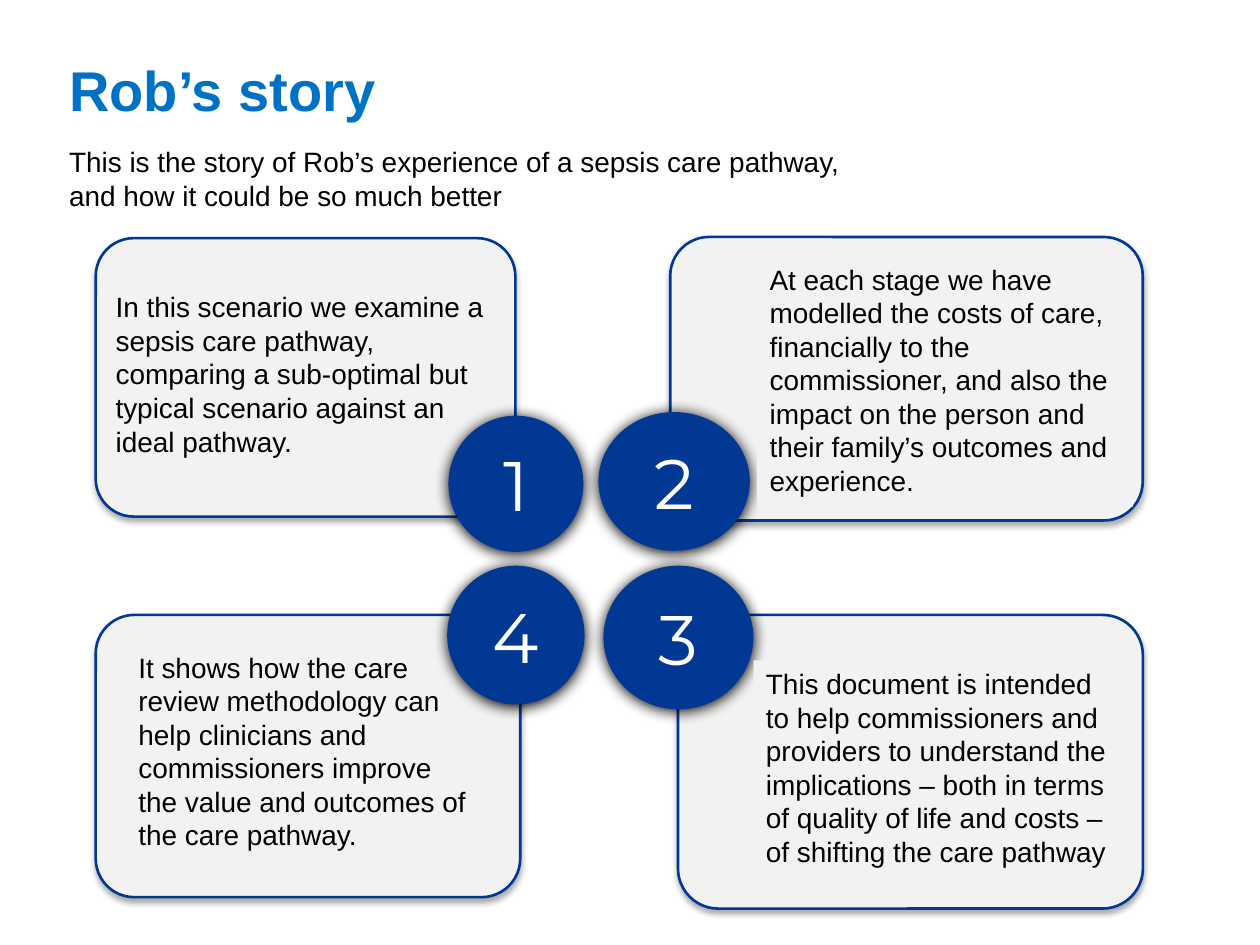
"""Build the slide that introduces Rob's story in four numbered cards."""
from typing import NamedTuple

from lxml.etree import SubElement as Sub
from pptx import Presentation as Deck
from pptx.dml.color import RGBColor as Rgb
from pptx.enum.shapes import MSO_SHAPE as Kind
from pptx.enum.text import MSO_ANCHOR as Anchor, PP_ALIGN as Align
from pptx.oxml.ns import qn
from pptx.util import Pt

NAVY, GREY, BLACK, WHITE, BLUE = "003893", "F2F2F2", "000000", "FFFFFF", "0072C6"


class Area(NamedTuple):
    left: float
    top: float
    width: float
    height: float


class Shade(NamedTuple):
    alpha: int
    blur: float
    dist: float


class Card(NamedTuple):
    num: str
    text: str
    box: Area
    disc: Area
    note: Area
    over: bool = True


SOFT, DEEP = Shade(32, 3.5, 2.2), Shade(100, 8.5, 1)

CARDS = [
    Card("1", "In this scenario we examine a sepsis care pathway, comparing a "
         "sub-optimal but typical scenario against an ideal pathway.",
         Area(54.7, 136.1, 239.8, 159.1), Area(257, 238.3, 75.6, 76.3),
         Area(59, 162, 227.5, 104.4), False),
    Card("4", "It shows how the care review methodology can help clinicians and "
         "commissioners improve the value and outcomes of the care pathway.",
         Area(54.7, 351.4, 242.6, 161.3), Area(256.3, 324, 77, 77.8),
         Area(72, 367.9, 203.8, 123.8)),
    Card("2", "At each stage we have modelled the costs of care, financially to the "
         "commissioner, and also the impact on the person and their family’s "
         "outcomes and experience.",
         Area(383, 135.4, 270, 162), Area(342.7, 236.2, 85, 77.8),
         Area(432.7, 146.2, 214.6, 143.3)),
    Card("3", "This document is intended to help commissioners and providers to "
         "understand the implications – both in terms of quality of life and "
         "costs – of shifting the care pathway",
         Area(387.4, 351.4, 265.7, 167.8), Area(345.6, 324, 84.2, 80.6),
         Area(430.6, 377.3, 216.7, 123.8)),
]


def tint(fmt, code: str) -> None:
    fmt.rgb = Rgb.from_string(code)


def paint(fill, code: str) -> None:
    fill.solid()
    tint(fill.fore_color, code)


def pts(area: Area) -> list[Pt]:
    return [Pt(n) for n in area]


def write(shape, text: str, size: float, code: str, font: str = "Arial",
          align=Align.LEFT, anchor=Anchor.TOP, bold: bool = False) -> None:
    frame = shape.text_frame
    frame.word_wrap = True
    frame.vertical_anchor = anchor
    para = frame.paragraphs[0]
    para.alignment = align
    run = para.add_run()
    run.text = text
    run.font.name, run.font.size, run.font.bold = font, Pt(size), bold
    tint(run.font.color, code)


def shade(shape, look: Shade) -> None:
    shape.shadow.inherit = False
    glow = Sub(shape._element.spPr.find(qn("a:effectLst")), qn("a:outerShdw"),
               blurRad=str(Pt(look.blur)), dist=str(Pt(look.dist)),
               dir="5400000", rotWithShape="0")
    ink = Sub(glow, qn("a:srgbClr"), val=BLACK)
    Sub(ink, qn("a:alpha"), val=str(look.alpha * 1000))


def draw(shapes, kind, area: Area, fill: str, look: Shade):
    shape = shapes.add_shape(kind, *pts(area))
    paint(shape.fill, fill)
    paint(shape.line.fill, NAVY)
    shape.line.width = Pt(1.5)
    shade(shape, look)
    return shape


def add_disc(shapes, card: Card) -> None:
    disc = draw(shapes, Kind.OVAL, card.disc, NAVY, DEEP)
    write(disc, card.num, 40, WHITE, "Montserrat", Align.CENTER, Anchor.MIDDLE)


def add_note(shapes, card: Card) -> None:
    note = shapes.add_textbox(*pts(card.note))
    if card.num != "4":
        paint(note.fill, GREY)
    write(note, card.text, 16, BLACK)


def add_card(slide, card: Card) -> None:
    shapes = slide.shapes.add_group_shape().shapes
    box = draw(shapes, Kind.ROUNDED_RECTANGLE, card.box, GREY, SOFT)
    box.adjustments[0] = 0.137
    steps = (add_disc, add_note) if card.over else (add_note, add_disc)
    for step in steps:
        step(shapes, card)


def main() -> None:
    deck = Deck()
    deck.slide_width, deck.slide_height = Pt(720), Pt(540)
    slide = deck.slides.add_slide(deck.slide_layouts[5])
    title = slide.shapes.title
    title.left, title.top, title.width, title.height = pts(Area(32.4, 24.5, 579.6, 52.6))
    write(title, "Rob’s story", 32, BLUE, anchor=Anchor.MIDDLE, bold=True)
    intro = slide.shapes.add_textbox(*pts(Area(32.4, 79.2, 471.6, 79.9)))
    write(intro, "This is the story of Rob’s experience of a sepsis care pathway, "
          "and how it could be so much better", 16, BLACK)
    for card in CARDS:
        add_card(slide, card)
    deck.save("out.pptx")


if __name__ == "__main__":
    main()
